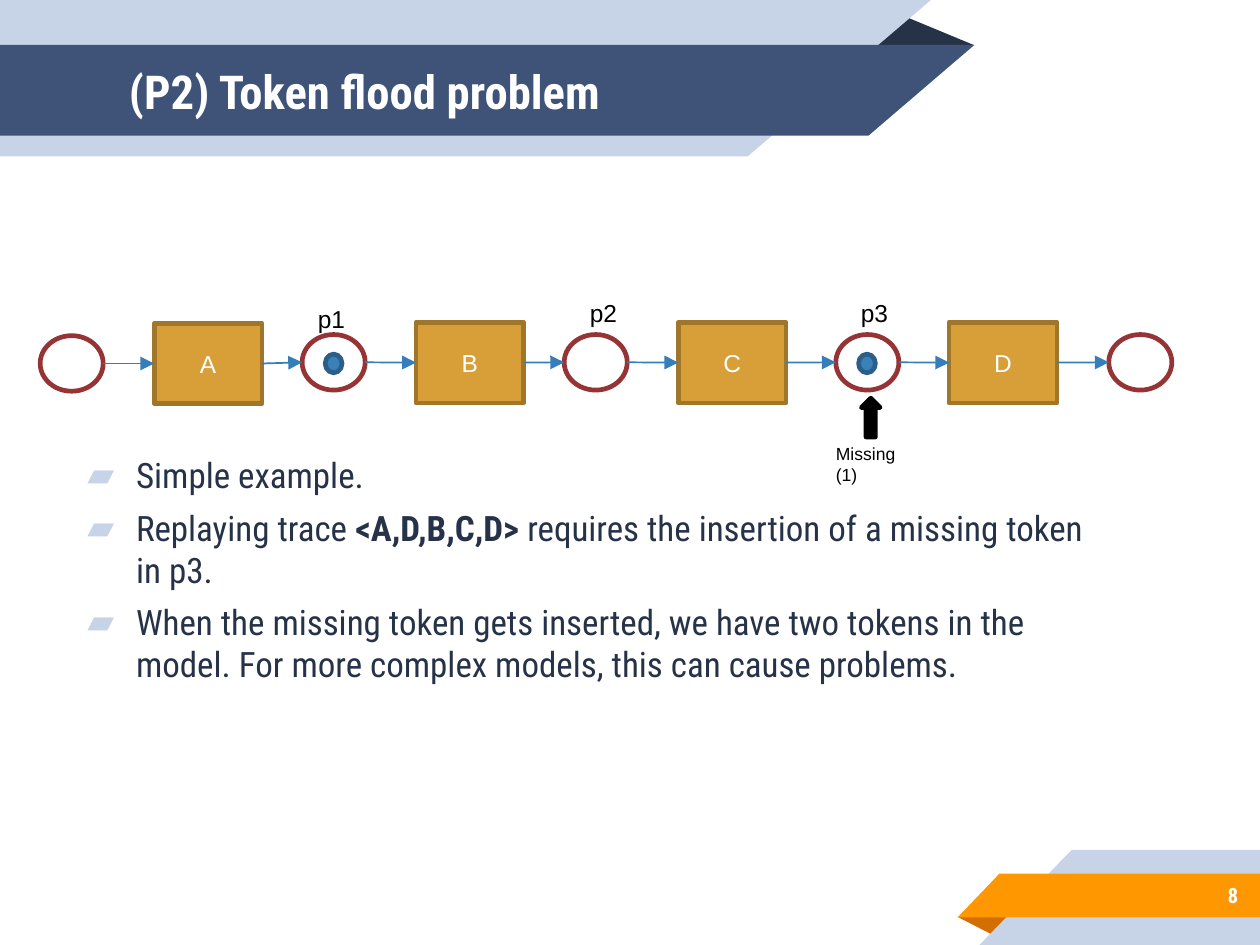
import itertools

import pptx
import pptx.dml.color
import pptx.enum.shapes
import pptx.enum.text
import pptx.oxml.ns
import pptx.util
from lxml import etree

Pt = pptx.util.Pt
SHAPE = pptx.enum.shapes.MSO_SHAPE
ALIGN = pptx.enum.text.PP_ALIGN
ANCHOR = pptx.enum.text.MSO_ANCHOR
qn = pptx.oxml.ns.qn

HEADING_FONT = "Roboto Condensed"
COLOURS = {
    "white": "FFFFFF", "black": "000000", "ink": "263248",
    "pale": "C7D3E6", "navy": "3F5378", "orange": "FF9800", "rust": "D26F00",
    "place": "963334", "task": "D89F39", "task_edge": "A0762A",
    "arrow": "367EB9", "token": "3A81BA", "token_edge": "2B5F8A",
}
RIBBONS = [
    ("ink", [(371.5, 19.4), (386.5, 6.5), (417.6, 19.4)]),
    ("pale", [(0, 0), (399, 0), (320.5, 67), (0, 67)]),
    ("navy", [(0, 19.3), (417.6, 19.3), (372.2, 58.2), (0, 58.2)]),
    ("rust", [(410.4, 393), (433.4, 393), (426, 401)]),
    ("pale", [(459.4, 364.2), (540, 364.2), (540, 405), (419.8, 405)]),
    ("orange", [(428.4, 374.4), (540, 374.4), (540, 393.2), (410.4, 393.2)]),
]
PLACE_SIZE = (27, 23.8)
TASK_SIZE = (46.2, 34.6)
TOKEN_SIZE = (7.2, 8)
# Kind or task letter, left edge and vertical centre, in firing order
NET = [
    ("place", 17.2, 155.8), ("A", 66.1, 155.8),
    ("place", 129.5, 155.3), ("B", 178.3, 155.4),
    ("place", 241.8, 155.3), ("C", 290.7, 155.4),
    ("place", 358.2, 155.3), ("D", 406.8, 155.4),
    ("place", 475.2, 155.3),
]
BULLETS = [
    [("Simple example.", False)],
    [("Replaying trace ", False), ("<A,D,B,C,D> ", True),
     ("requires the insertion of a missing token in p3.", False)],
    [("When the missing token gets inserted, we have two tokens in the model. "
      "For more complex models, this can cause problems.", False)],
]


def rgb(name):
    return pptx.dml.color.RGBColor.from_string(COLOURS[name])


def paint(shape, fill, edge=None):
    shape.shadow.inherit = False
    shape.fill.solid()
    shape.fill.fore_color.rgb = rgb(fill)
    if edge:
        shape.line.color.rgb = rgb(edge)
        shape.line.width = Pt(2)
    else:
        shape.line.fill.background()


def add_run(paragraph, text, size=10.5, font="Arial", colour="black", bold=False):
    run = paragraph.add_run()
    run.text = text
    run.font.size = Pt(size)
    run.font.name = font
    run.font.color.rgb = rgb(colour)
    run.font.bold = bold


def add_polygon(slide, points, fill):
    builder = slide.shapes.build_freeform(
        Pt(points[0][0]), Pt(points[0][1]), scale=1.0)
    builder.add_line_segments([(Pt(x), Pt(y)) for x, y in points[1:]], close=True)
    paint(builder.convert_to_shape(), fill)


def add_preset(slide, kind, left, middle, size, fill, edge):
    """Add a preset shape placed by its left edge and vertical centre."""
    width, height = size
    shape = slide.shapes.add_shape(
        kind, Pt(left), Pt(middle - height / 2), Pt(width), Pt(height))
    paint(shape, fill, edge)
    return shape


def add_text(slide, text, left, top, width, height, inset=None, wrap=True,
             anchor=ANCHOR.TOP, align=ALIGN.LEFT, **format):
    box = slide.shapes.add_textbox(Pt(left), Pt(top), Pt(width), Pt(height))
    frame = box.text_frame
    frame.word_wrap = wrap
    frame.vertical_anchor = anchor
    if inset is not None:
        frame.margin_left = frame.margin_right = Pt(inset)
        frame.margin_top = frame.margin_bottom = Pt(inset)
    frame.paragraphs[0].alignment = align
    if text:
        add_run(frame.paragraphs[0], text, **format)
    return frame


def add_arrow(slide, start, end, middle_start, middle_end):
    arrow = slide.shapes.add_connector(
        pptx.enum.shapes.MSO_CONNECTOR.STRAIGHT,
        Pt(start), Pt(middle_start), Pt(end), Pt(middle_end))
    arrow.line.color.rgb = rgb("arrow")
    arrow.line.width = Pt(0.75)
    etree.SubElement(arrow.line._get_or_add_ln(), qn("a:tailEnd"), type="triangle")
    etree.SubElement(arrow._element.spPr, qn("a:effectLst"))


def add_bullet_mark(paragraph):
    properties = paragraph._p.get_or_add_pPr()
    properties.set("marL", str(Pt(27.4)))
    properties.set("indent", str(-Pt(20.9)))
    colour = etree.SubElement(properties, qn("a:buClr"))
    etree.SubElement(colour, qn("a:srgbClr"), val=COLOURS["pale"])
    etree.SubElement(properties, qn("a:buFont"), typeface=HEADING_FONT)
    etree.SubElement(properties, qn("a:buChar"), char="▰")


def add_bullets(slide):
    frame = add_text(slide, "", 23.8, 187.2, 461.5, 95, inset=7.2)
    for index, pieces in enumerate(BULLETS):
        paragraph = frame.add_paragraph() if index else frame.paragraphs[0]
        add_bullet_mark(paragraph)
        if index:
            paragraph.space_before = Pt(4.5)
        for text, bold in pieces:
            add_run(paragraph, text, size=15, font=HEADING_FONT,
                    colour="ink", bold=bold)


def add_net(slide):
    for kind, left, middle in NET:
        if kind == "place":
            add_preset(slide, SHAPE.OVAL, left, middle, PLACE_SIZE, "white", "place")
        else:
            task = add_preset(slide, SHAPE.RECTANGLE, left, middle, TASK_SIZE,
                              "task", "task_edge")
            task.text_frame.vertical_anchor = ANCHOR.MIDDLE
            paragraph = task.text_frame.paragraphs[0]
            paragraph.alignment = ALIGN.CENTER
            add_run(paragraph, kind, colour="white")
    for (kind, left, middle), (_, next_left, next_middle) in itertools.pairwise(NET):
        width = (PLACE_SIZE if kind == "place" else TASK_SIZE)[0]
        add_arrow(slide, left + width, next_left, middle, next_middle)
    for left in (139.4, 368):
        add_preset(slide, SHAPE.OVAL, left, 155.8, TOKEN_SIZE, "token", "token_edge")
    for label, left, top in (("p1", 129.2, 127), ("p2", 245.8, 124.4),
                             ("p3", 361.9, 124.4)):
        add_text(slide, label, left, top, 26.6, 20, wrap=False)


def main():
    presentation = pptx.Presentation()
    presentation.slide_width = Pt(540)
    presentation.slide_height = Pt(405)
    slide = presentation.slides.add_slide(presentation.slide_layouts[6])

    for fill, points in RIBBONS:
        add_polygon(slide, points, fill)
    add_text(slide, "(P2) Token flood problem", 48.2, 19.3, 310.3, 38.9,
             inset=7.2, anchor=ANCHOR.MIDDLE, size=20, font=HEADING_FONT,
             colour="white", bold=True)
    add_bullets(slide)
    add_text(slide, "8", 450, 374.4, 87.8, 18.8, inset=7.2, anchor=ANCHOR.MIDDLE,
             align=ALIGN.RIGHT, size=9, font=HEADING_FONT, colour="white", bold=True)
    add_net(slide)
    add_preset(slide, SHAPE.UP_ARROW, 369.2, 179, (8, 16.6), "black", "black")
    add_text(slide, "Missing (1)", 351.1, 186.5, 51.1, 16.6, wrap=False, size=7.5)

    presentation.save("out.pptx")


if __name__ == "__main__":
    main()
